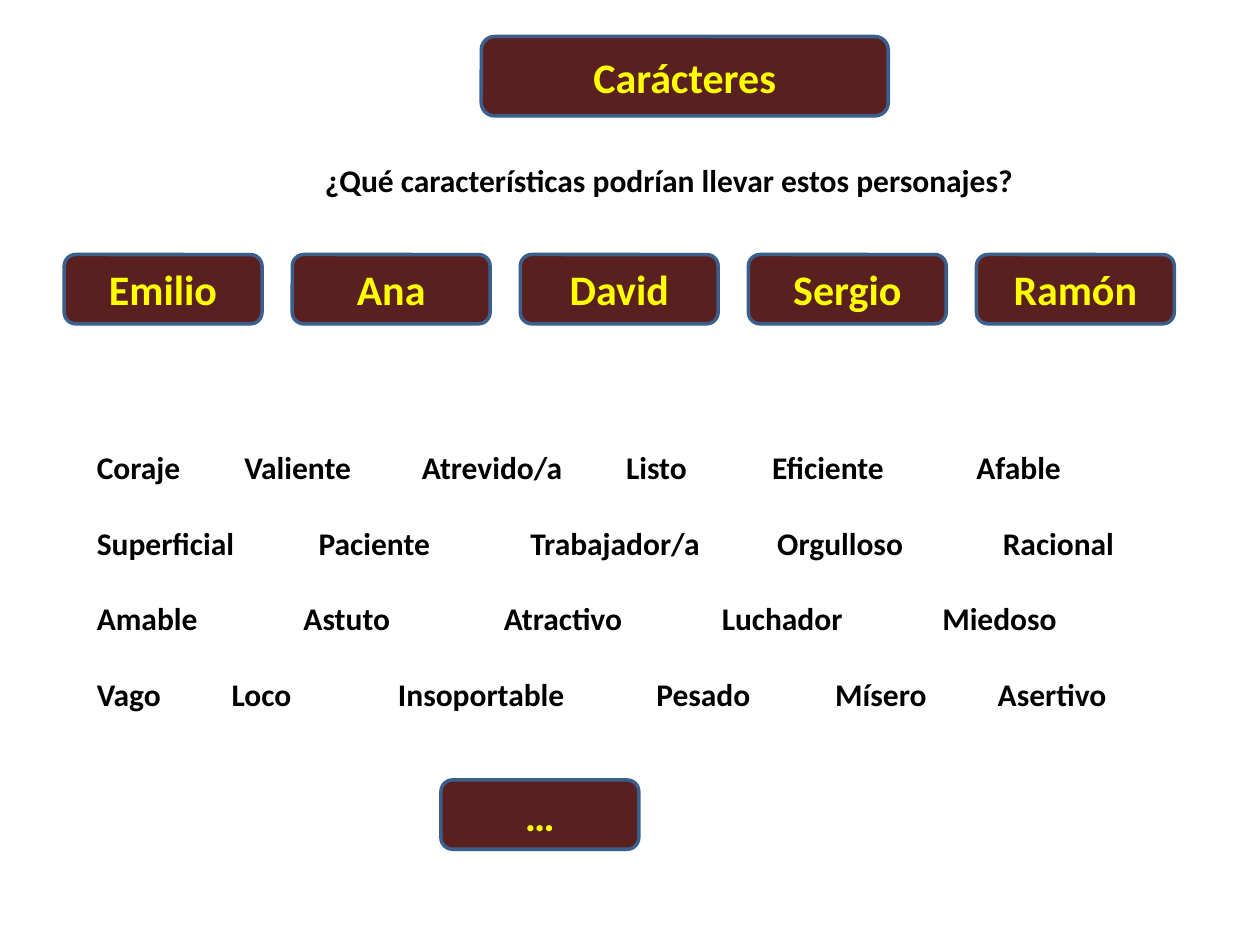
from lxml import etree
from pptx import Presentation
from pptx import util as u
from pptx.dml import color
from pptx.enum import shapes, text
from pptx.oxml import ns

COLORS = {"box": "5A2020", "border": "3A5F8C", "label": "FFFF00", "text": "000000"}
FONT = "Calibri"

NAMES = ["Emilio", "Ana", "David", "Sergio", "Ramón"]
NAME_LEFT, NAME_PITCH = 0.51, 1.81
BOX_WIDTH, BOX_HEIGHT = 1.57, 0.55

# Each row: its words, and the tab stops (inches) of all words after the first
TRAIT_ROWS = [
    (["Coraje", "Valiente", "Atrevido/a", "Listo", "Eficiente", "Afable"],
     [1.17, 2.58, 4.2, 5.36, 6.98]),
    (["Superficial", "Paciente", "Trabajador/a", "Orgulloso", "Racional"],
     [1.76, 3.44, 5.4, 7.19]),
    (["Amable", "Astuto", "Atractivo", "Luchador", "Miedoso"],
     [1.64, 3.23, 4.96, 6.71]),
    (["Vago", "Loco", "Insoportable", "Pesado", "Mísero", "Asertivo"],
     [1.07, 2.39, 4.44, 5.86, 7.15]),
]


def rgb(name):
    return color.RGBColor.from_string(COLORS[name])


def add_run(paragraph, content, size, color_name):
    run = paragraph.add_run()
    run.text = content
    run.font.name = FONT
    run.font.size = u.Pt(size)
    run.font.bold = True
    run.font.color.rgb = rgb(color_name)


def add_label_box(slide, label, left, top, width=BOX_WIDTH, height=BOX_HEIGHT):
    shape = slide.shapes.add_shape(
        shapes.MSO_SHAPE.ROUNDED_RECTANGLE,
        u.Inches(left), u.Inches(top), u.Inches(width), u.Inches(height))
    shape.shadow.inherit = False
    shape.fill.solid()
    shape.fill.fore_color.rgb = rgb("box")
    shape.line.color.rgb = rgb("border")
    shape.line.width = u.Pt(2)
    frame = shape.text_frame
    frame.vertical_anchor = text.MSO_ANCHOR.MIDDLE
    paragraph = frame.paragraphs[0]
    paragraph.alignment = text.PP_ALIGN.CENTER
    add_run(paragraph, label, 24, "label")


def add_text_frame(slide, left, top, width, height, wrap):
    box = slide.shapes.add_textbox(
        u.Inches(left), u.Inches(top), u.Inches(width), u.Inches(height))
    box.text_frame.word_wrap = wrap
    return box.text_frame


def set_tab_stops(paragraph, stops):
    properties = paragraph._p.get_or_add_pPr()
    tab_list = etree.SubElement(properties, ns.qn("a:tabLst"))
    for stop in stops:
        etree.SubElement(tab_list, ns.qn("a:tab"), pos=str(u.Inches(stop)), algn="l")


def add_trait_rows(slide):
    frame = add_text_frame(slide, 0.67, 3.51, 8.39, 2.22, wrap=True)
    for index, (words, stops) in enumerate(TRAIT_ROWS):
        paragraph = frame.add_paragraph() if index else frame.paragraphs[0]
        if index:
            paragraph.space_before = u.Pt(21.5)
        set_tab_stops(paragraph, stops)
        add_run(paragraph, "\t".join(words), 18, "text")


def main():
    presentation = Presentation()
    presentation.slide_width = u.Inches(10)
    presentation.slide_height = u.Inches(7.5)
    slide = presentation.slides.add_slide(presentation.slide_layouts[6])

    # Title
    add_label_box(slide, "Carácteres", 3.82, 0.29, 3.23, 0.63)

    # Characters
    for index, name in enumerate(NAMES):
        add_label_box(slide, name, NAME_LEFT + index * NAME_PITCH, 2.02)

    # Question
    question = add_text_frame(slide, 2.48, 1.23, 5.82, 0.4, wrap=False)
    add_run(question.paragraphs[0],
            "¿Qué características podrían llevar estos personajes?", 18, "text")

    # Traits to choose from
    add_trait_rows(slide)
    add_label_box(slide, "…", 3.5, 6.19)

    presentation.save("out.pptx")


if __name__ == "__main__":
    main()
